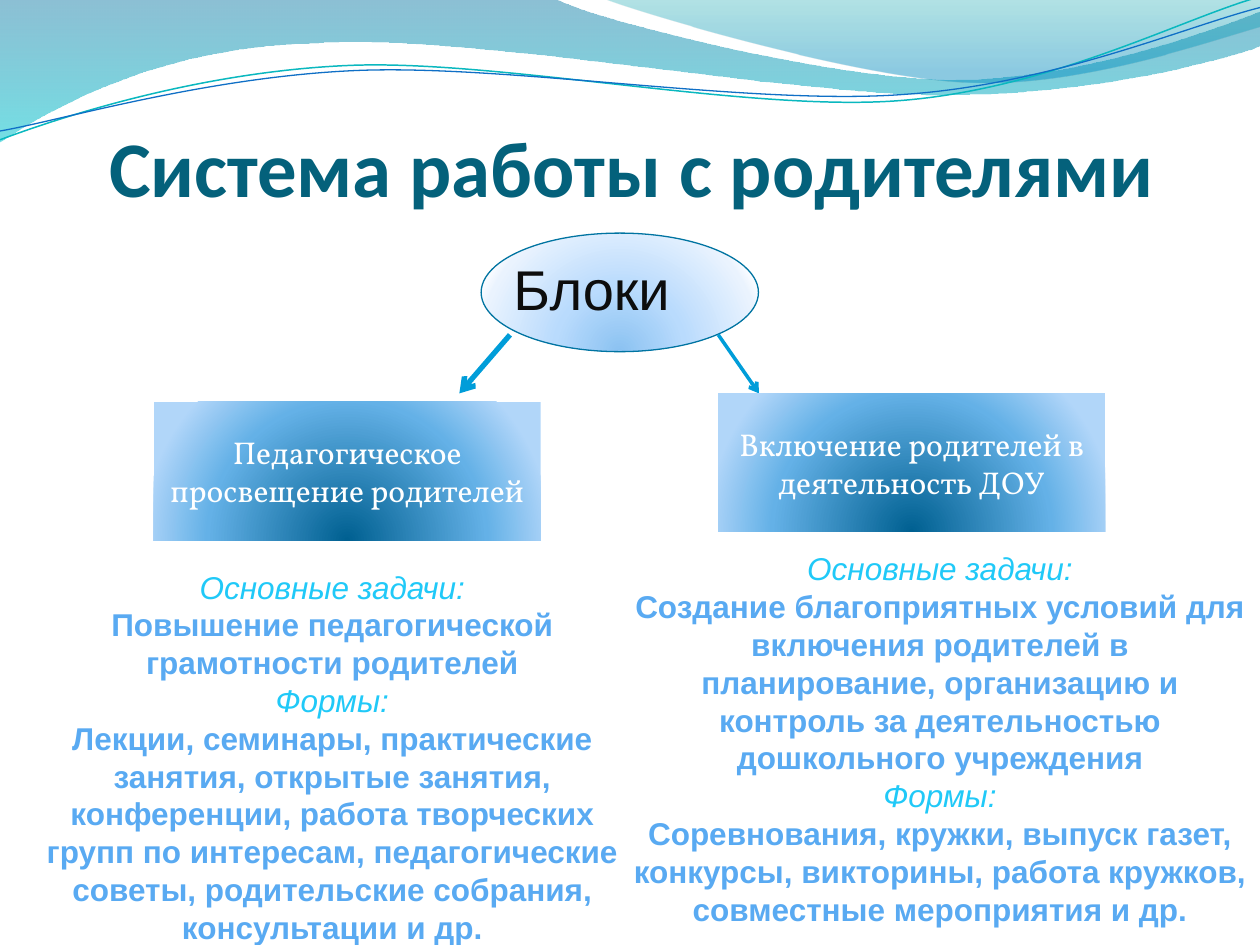
from lxml import etree
from pptx import Presentation
from pptx import util as u
from pptx.dml.color import RGBColor
from pptx.enum import shapes, text
from pptx.oxml import ns

TITLE = RGBColor(0x04, 0x61, 0x7B)
OUTLINE = RGBColor(0x00, 0x74, 0xA1)
ARROW = RGBColor(0x00, 0x9D, 0xD9)
INK = RGBColor(0x0D, 0x0D, 0x0D)
WHITE = RGBColor(0xFF, 0xFF, 0xFF)
HEADING = RGBColor(0x20, 0xC9, 0xF8)
BODY = RGBColor(0x59, 0xAA, 0xF2)
TEAL = RGBColor(0x0A, 0xB8, 0xBF)
BLUE = RGBColor(0x0F, 0x6F, 0xC6)

# Gradient stops: position, colour, opacity (all in percent but the colour)
WIDE_WAVE = [(0, OUTLINE, 45), (100, RGBColor(0x00, 0xC6, 0xCF), 55)]
RIGHT_WAVE = [(0, RGBColor(0x00, 0xA1, 0xA9), 30),
              (80, RGBColor(0x00, 0x8B, 0xBF), 45)]
OVAL = [(0, RGBColor(0x8B, 0xC2, 0xF1), 100),
        (43, RGBColor(0xB9, 0xDB, 0xFD), 100),
        (93, RGBColor(0xEA, 0xF3, 0xFE), 100),
        (100, RGBColor(0xF8, 0xFB, 0xFF), 100)]
PANEL = [(0, RGBColor(0x00, 0x60, 0x91), 100),
         (68, RGBColor(0x64, 0xB1, 0xE7), 100),
         (100, RGBColor(0xB1, 0xD6, 0xF9), 100)]

# Outlines in tenths of the page width: pairs are corners, sixes are curves
WIDE_OUTLINE = [(0, 0), (4.4, -0.01), (4.76, 0.17, 6.64, 0.63, 7.58, 0.63),
                (8.53, 0.63, 9.58, 0.26, 10, 0.09), (10.01, 0.36),
                (9.83, 0.44, 8.7, 0.76, 7.46, 0.75),
                (6.22, 0.75, 3.82, 0.28, 2.57, 0.34),
                (1.29, 0.36, 0.46, 0.83, -0.01, 1.13)]
RIGHT_OUTLINE = [(4.79, -0.01), (5.09, 0.11, 6.82, 0.62, 7.69, 0.65),
                 (8.56, 0.69, 9.61, 0.32, 10, 0.21), (10, 0)]
TEAL_CURVE = [(0, 1.11), (0.48, 0.93, 1.58, 0.57, 2.77, 0.52),
              (3.95, 0.47, 5.93, 0.89, 7.13, 0.8),
              (8.33, 0.71, 9.38, 0.15, 9.98, -0.02)]
BLUE_CURVE = [(0, 1.04), (0.47, 0.96, 1.64, 0.61, 2.83, 0.56),
              (4.03, 0.51, 5.97, 0.84, 7.17, 0.75),
              (8.36, 0.67, 9.41, 0.21, 10, 0.06)]

TASKS, FORMS = "Основные задачи:", "Формы:"


def cm_box(*lengths):
    return [u.Cm(length) for length in lengths]


def set_gradient(shape, stops, radial=False):
    """Fill with stops, top to bottom or outwards from below the shape."""
    shape.fill.gradient()
    gradient = shape._element.spPr.find(ns.qn("a:gradFill"))
    for child in list(gradient):
        gradient.remove(child)
    stop_list = etree.SubElement(gradient, ns.qn("a:gsLst"))
    for position, colour, opacity in stops:
        stop = etree.SubElement(stop_list, ns.qn("a:gs"), pos=str(position * 1000))
        tone = etree.SubElement(stop, ns.qn("a:srgbClr"), val=str(colour))
        if opacity < 100:
            etree.SubElement(tone, ns.qn("a:alpha"), val=str(opacity * 1000))
    if radial:
        radial_fill = etree.SubElement(gradient, ns.qn("a:path"))
        radial_fill.set("path", "circle")
        etree.SubElement(radial_fill, ns.qn("a:fillToRect"),
                         l="50000", t="130000", r="50000", b="-30000")
    else:
        etree.SubElement(gradient, ns.qn("a:lin"), ang="5400000", scaled="1")


def add_outline(page, outline, width, close):
    """Draw the control points as lines, then join each three into a curve."""
    unit = width / 10
    points = [(segment[i] * unit, segment[i + 1] * unit)
              for segment in outline for i in range(0, len(segment), 2)]
    builder = page.shapes.build_freeform(*points[0])
    builder.add_line_segments(points[1:], close=close)
    shape = builder.convert_to_shape()
    shape.shadow.inherit = False
    lines = iter(list(shape._element.iter(ns.qn("a:lnTo"))))
    for segment in outline[1:]:
        line = next(lines)
        if len(segment) == 6:
            curve = etree.Element(ns.qn("a:cubicBezTo"))
            line.addprevious(curve)
            for control in (line, next(lines), next(lines)):
                curve.append(control[0])
                control.getparent().remove(control)
    return shape


def add_waves(page, width):
    for outline, stops in ((WIDE_OUTLINE, WIDE_WAVE), (RIGHT_OUTLINE, RIGHT_WAVE)):
        wave = add_outline(page, outline, width, True)
        set_gradient(wave, stops)
        wave.line.fill.background()
    for outline, colour, weight in ((TEAL_CURVE, TEAL, 0.85), (BLUE_CURVE, BLUE, 0.75)):
        curve = add_outline(page, outline, width, False)
        curve.fill.background()
        curve.line.color.rgb = colour
        curve.line.width = u.Pt(weight)


def format_span(span, name, size, colour, bold=False, italic=False):
    font = span.font
    font.name, font.size, font.bold, font.italic = name, u.Pt(size), bold, italic
    font.color.rgb = colour


def set_title(page, left, top, width, height):
    title = page.shapes.title
    title.left, title.top, title.width, title.height = left, top, width, height
    frame = title.text_frame
    frame.text = "Система работы с родителями"
    frame.vertical_anchor = text.MSO_ANCHOR.BOTTOM
    frame.margin_left = frame.margin_right = frame.margin_bottom = 0
    para = frame.paragraphs[0]
    para.alignment = text.PP_ALIGN.CENTER
    format_span(para.runs[0], "Calibri", 45, TITLE, bold=True)


def add_root(page, left, top, width, height):
    oval = page.shapes.add_shape(shapes.MSO_SHAPE.OVAL, left, top, width, height)
    oval.shadow.inherit = False
    set_gradient(oval, OVAL, radial=True)
    oval.line.color.rgb = OUTLINE
    oval.line.width = u.Pt(0.75)
    label = page.shapes.add_textbox(left + u.Cm(0.4), top + u.Cm(0.3),
                                    *cm_box(3.81, 1.63))
    label.text_frame.word_wrap = True
    label.text_frame.text = "Блоки"
    format_span(label.text_frame.paragraphs[0].runs[0], "Arial", 32, INK)


def add_arrow(page, ends, weight):
    arrow = page.shapes.add_connector(shapes.MSO_CONNECTOR.STRAIGHT, *ends)
    arrow.line.color.rgb = ARROW
    arrow.line.width = u.Pt(weight)
    etree.SubElement(arrow.line._get_or_add_ln(), ns.qn("a:tailEnd"), type="arrow")
    etree.SubElement(arrow._element.spPr, ns.qn("a:effectLst"))


def add_panel(page, words, left, top):
    panel = page.shapes.add_shape(shapes.MSO_SHAPE.RECTANGLE, left, top,
                                  *cm_box(7.8, 2.79))
    panel.shadow.inherit = False
    set_gradient(panel, PANEL, radial=True)
    panel.line.fill.background()
    frame = panel.text_frame
    frame.text = words
    frame.vertical_anchor = text.MSO_ANCHOR.MIDDLE
    para = frame.paragraphs[0]
    para.alignment = text.PP_ALIGN.CENTER
    format_span(para.runs[0], "Vollkorn", 18, WHITE)


def add_details(page, paragraphs, box):
    frame = page.shapes.add_textbox(*box).text_frame
    frame.word_wrap = True
    frame.text = "\n".join(paragraphs)
    for para in frame.paragraphs:
        para.alignment = text.PP_ALIGN.CENTER
        for span in para.runs:
            heading = span.text in (TASKS, FORMS)
            format_span(span, "Arial", 18, HEADING if heading else BODY,
                        bold=not heading, italic=heading)


def main():
    deck = Presentation()
    deck.slide_width, deck.slide_height = cm_box(25.4, 19.05)
    page = deck.slides.add_slide(deck.slide_layouts[5])
    add_waves(page, deck.slide_width)
    set_title(page, *cm_box(1.3, 1.12, 22.86, 3.18))
    add_root(page, *cm_box(9.7, 4.7, 5.59, 2.39))
    add_arrow(page, cm_box(10.28, 6.75, 9.26, 7.93), 3)
    add_arrow(page, cm_box(14.48, 6.75, 15.3, 7.93), 2)
    add_panel(page, "Педагогическое просвещение родителей", *cm_box(3.1, 8.1))
    add_panel(page, "Включение родителей в деятельность ДОУ", *cm_box(14.48, 7.93))
    add_details(page, [
        f"{TASKS}\vПовышение педагогической грамотности родителей\v{FORMS}",
        "Лекции, семинары, практические занятия, открытые занятия, "
        "конференции, работа творческих групп по интересам, педагогические "
        "советы, родительские собрания, консультации и др.",
    ], cm_box(0.5, 11.32, 12.4, 8.71))
    add_details(page, [
        TASKS,
        "Создание благоприятных условий для включения родителей в "
        "планирование, организацию и контроль за деятельностью "
        "дошкольного учреждения",
        FORMS,
        "Соревнования, кружки, выпуск газет, конкурсы, викторины, "
        "работа кружков, совместные мероприятия и др.",
    ], cm_box(12.5, 10.95, 12.9, 8.71))
    deck.save("out.pptx")


if __name__ == "__main__":
    main()
